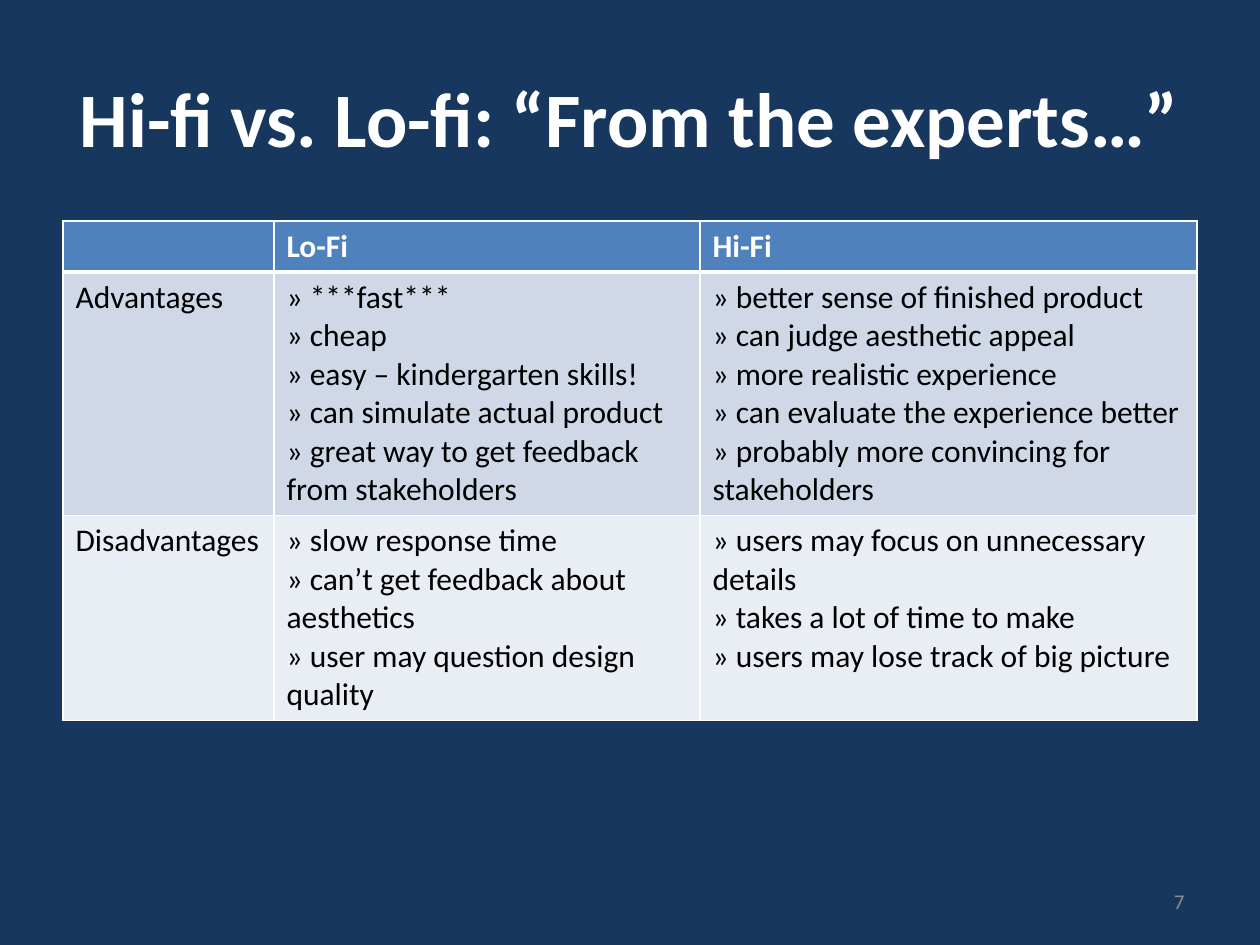
from dataclasses import dataclass

from lxml import etree
from pptx import Presentation
from pptx import util as u
from pptx.dml.color import RGBColor
from pptx.enum import text
from pptx.oxml import ns

TITLE = "Hi-fi vs. Lo-fi: “From the experts…”"
PAGE_NUMBER = "7"
ROWS = [
    [[], ["Lo-Fi"], ["Hi-Fi"]],
    [
        ["Advantages"],
        ["» ***fast***", "» cheap", "» easy – kindergarten skills!",
         "» can simulate actual product",
         "» great way to get feedback from stakeholders"],
        ["» better sense of finished product", "» can judge aesthetic appeal",
         "» more realistic experience",
         "» can evaluate the experience better",
         "» probably more convincing for stakeholders"],
    ],
    [
        ["Disadvantages"],
        ["» slow response time", "» can’t get feedback about aesthetics",
         "» user may question design quality"],
        ["» users may focus on unnecessary details",
         "» takes a lot of time to make",
         "» users may lose track of big picture"],
    ],
]
COLUMN_WIDTHS = [211, 426, 497]
ROW_HEIGHTS = [51, 243, 205]
TITLE_AREA = (63, 38, 1134, 157)
TABLE_ORIGIN = (63, 221)
NUMBER_AREA = (903, 876, 294, 50)


@dataclass(frozen=True)
class Theme:
    font: str = "Calibri"
    background: str = "17375E"
    light: str = "FFFFFF"
    dark: str = "000000"
    muted: str = "8C8C8C"
    row_fills: tuple = ("4F81BD", "D0D8E8", "E9EDF4")
    title_size: int = 44
    table_size: int = 18
    number_size: int = 12
    rule: int = 1
    header_rule: int = 3


THEME = Theme()


def px(value):
    return u.Emu(value * 914400 // 126)


def paint(fill, color):
    fill.solid()
    fill.fore_color.rgb = RGBColor.from_string(color)


def write(frame, lines, size, color, bold=False, align=text.PP_ALIGN.LEFT):
    frame.text = "\n".join(lines)
    frame.word_wrap = True
    for para in frame.paragraphs:
        para.alignment = align
        para.font.size = u.Pt(size)
        for span in para.runs:
            span.font.name = THEME.font
            span.font.size = u.Pt(size)
            span.font.bold = bold
            span.font.color.rgb = RGBColor.from_string(color)


def set_borders(cell, widths):
    properties = cell._tc.get_or_add_tcPr()
    for index, (side, width) in enumerate(widths.items()):
        line = etree.Element(ns.qn(f"a:ln{side}"), w=str(u.Pt(width)))
        fill = etree.SubElement(line, ns.qn("a:solidFill"))
        etree.SubElement(fill, ns.qn("a:srgbClr"), val=THEME.light)
        properties.insert(index, line)


def add_title(page):
    box = page.shapes.title
    box.left, box.top, box.width, box.height = map(px, TITLE_AREA)
    write(box.text_frame, [TITLE], THEME.title_size, THEME.light, True,
          text.PP_ALIGN.CENTER)
    box.text_frame.vertical_anchor = text.MSO_ANCHOR.MIDDLE


def add_comparison(page):
    size = (sum(COLUMN_WIDTHS), sum(ROW_HEIGHTS))
    table = page.shapes.add_table(
        len(ROWS), len(COLUMN_WIDTHS), *map(px, TABLE_ORIGIN + size)).table
    for column, width in zip(table.columns, COLUMN_WIDTHS):
        column.width = px(width)
    for row, height in zip(table.rows, ROW_HEIGHTS):
        row.height = px(height)
    for r, entries in enumerate(ROWS):
        header = r == 0
        top = THEME.header_rule if r == 1 else THEME.rule
        bottom = THEME.header_rule if header else THEME.rule
        for c, lines in enumerate(entries):
            cell = table.cell(r, c)
            write(cell.text_frame, lines, THEME.table_size,
                  THEME.light if header else THEME.dark, header)
            paint(cell.fill, THEME.row_fills[r])
            set_borders(cell, {"L": THEME.rule, "R": THEME.rule,
                               "T": top, "B": bottom})


def add_page_number(page):
    box = page.shapes.add_textbox(*map(px, NUMBER_AREA))
    write(box.text_frame, [PAGE_NUMBER], THEME.number_size, THEME.muted,
          align=text.PP_ALIGN.RIGHT)
    box.text_frame.vertical_anchor = text.MSO_ANCHOR.MIDDLE


def main():
    deck = Presentation()
    deck.slide_width, deck.slide_height = px(1260), px(945)
    page = deck.slides.add_slide(deck.slide_layouts.get_by_name("Title Only"))
    paint(page.background.fill, THEME.background)
    add_title(page)
    add_comparison(page)
    add_page_number(page)
    deck.save("out.pptx")


if __name__ == "__main__":
    main()
